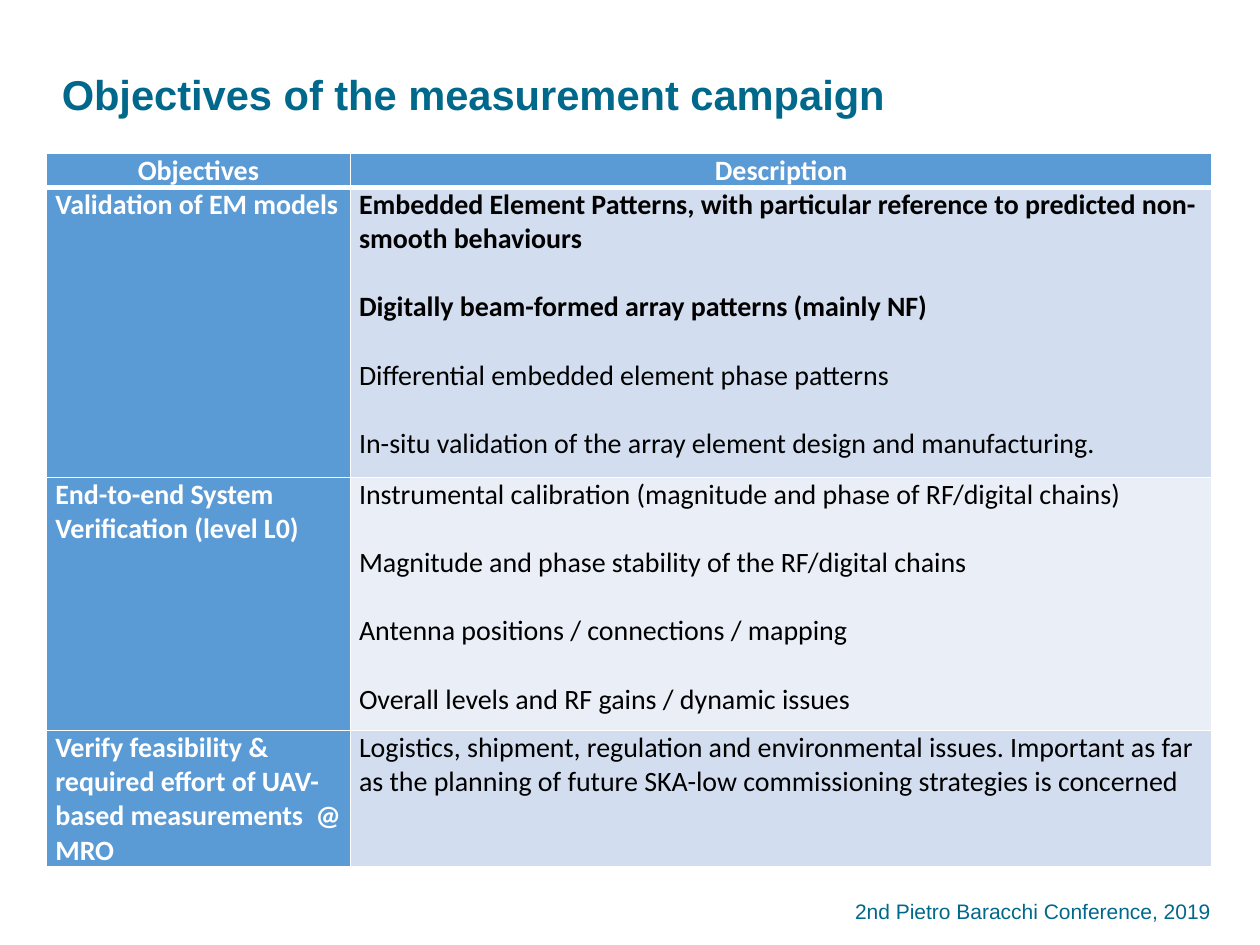
"""Build the slide listing the objectives of the measurement campaign."""
from dataclasses import dataclass

import lxml.etree
import pptx
import pptx.dml.color
import pptx.enum.text
import pptx.oxml
import pptx.oxml.ns
import pptx.util

Inches = pptx.util.Inches
Pt = pptx.util.Pt
RGBColor = pptx.dml.color.RGBColor
Align = pptx.enum.text.PP_ALIGN
Anchor = pptx.enum.text.MSO_ANCHOR

TEAL = RGBColor(0x00, 0x68, 0x8A)
BLUE = RGBColor(0x5B, 0x9B, 0xD5)
PALE_BLUE = RGBColor(0xD2, 0xDE, 0xEF)
PALER_BLUE = RGBColor(0xEA, 0xEF, 0xF7)
WHITE = RGBColor(0xFF, 0xFF, 0xFF)
BLACK = RGBColor(0x00, 0x00, 0x00)

COLUMN_WIDTHS = (2.41, 6.84)
HEADINGS = ("Objectives", "Description")
HEADING_HEIGHT = 0.27
ITEM_GAP = Pt(19.5)


@dataclass(frozen=True)
class Objective:
    name: str
    items: tuple[str, ...]
    height: float
    tint: RGBColor
    bold_items: int = 0


OBJECTIVES = (
    Objective(
        "Validation of EM models",
        (
            "Embedded Element Patterns, with particular reference to predicted non-smooth behaviours",
            "Digitally beam-formed array patterns (mainly NF)",
            "Differential embedded element phase patterns",
            "In-situ validation of the array element design and manufacturing.",
        ),
        2.3, PALE_BLUE, bold_items=2,
    ),
    Objective(
        "End-to-end System Verification (level L0)",
        (
            "Instrumental calibration (magnitude and phase of RF/digital chains)",
            "Magnitude and phase stability of the RF/digital chains",
            "Antenna positions / connections / mapping",
            "Overall levels and RF gains / dynamic issues",
        ),
        2.01, PALER_BLUE,
    ),
    Objective(
        "Verify feasibility & required effort of UAV-based measurements  @ MRO",
        (
            "Logistics, shipment, regulation and environmental issues. Important as far as "
            "the planning of future SKA-low commissioning strategies is concerned",
        ),
        1.08, PALE_BLUE,
    ),
)


def set_format(target, values: dict) -> None:
    for attribute, value in values.items():
        setattr(target, attribute, value)


def write_paragraph(paragraph, text: str, size: float, face: str, color: RGBColor,
                    bold: bool = False, align=Align.LEFT) -> None:
    paragraph.alignment = align
    run = paragraph.add_run()
    run.text = text
    set_format(run.font, {"size": Pt(size), "name": face, "bold": bold})
    run.font.color.rgb = color


def add_border(cell, side: str, points: float) -> None:
    line = lxml.etree.SubElement(cell._tc.get_or_add_tcPr(), pptx.oxml.ns.qn(f"a:ln{side}"),
                                 w=str(Pt(points)))
    fill = lxml.etree.SubElement(line, pptx.oxml.ns.qn("a:solidFill"))
    lxml.etree.SubElement(fill, pptx.oxml.ns.qn("a:srgbClr"), val=str(WHITE))


def fill_cell(cell, items: tuple[str, ...], fill: RGBColor, color: RGBColor, bold_items: int,
              align=Align.LEFT, top: float = 1, bottom: float = 1) -> None:
    set_format(cell, {"margin_left": Inches(0.07), "margin_right": Inches(0.07),
                      "margin_top": 0, "margin_bottom": 0, "vertical_anchor": Anchor.TOP})
    for side, points in {"L": 1, "R": 1, "T": top, "B": bottom}.items():
        add_border(cell, side, points)
    cell.fill.solid()
    cell.fill.fore_color.rgb = fill
    for index, item in enumerate(items):
        paragraph = cell.text_frame.add_paragraph() if index else cell.text_frame.paragraphs[0]
        if index:
            paragraph.space_before = ITEM_GAP
        write_paragraph(paragraph, item, 16, "Calibri", color, index < bold_items, align)


def add_objectives(slide) -> None:
    heights = (HEADING_HEIGHT, *(objective.height for objective in OBJECTIVES))
    table = slide.shapes.add_table(
        len(heights), len(COLUMN_WIDTHS), Inches(0.37), Inches(1.22),
        Inches(sum(COLUMN_WIDTHS)), Inches(sum(heights))).table
    for column, width in zip(table.columns, COLUMN_WIDTHS):
        column.width = Inches(width)
    for row, height in zip(table.rows, heights):
        row.height = Inches(height)
    for column, heading in enumerate(HEADINGS):
        fill_cell(table.cell(0, column), (heading,), BLUE, WHITE, 1, Align.CENTER, bottom=3)
    for row, objective in enumerate(OBJECTIVES, start=1):
        top = 3 if row == 1 else 1
        fill_cell(table.cell(row, 0), (objective.name,), BLUE, WHITE, 1, top=top)
        fill_cell(table.cell(row, 1), objective.items, objective.tint, BLACK,
                  objective.bold_items, top=top)


def add_title(slide) -> None:
    title = slide.shapes.title
    set_format(title, {"left": Inches(0.39), "top": Inches(0.57),
                       "width": Inches(6.86), "height": Inches(0.68)})
    set_format(title.text_frame, {"vertical_anchor": Anchor.TOP, "word_wrap": True,
                                  "auto_size": pptx.enum.text.MSO_AUTO_SIZE.NONE})
    heading = title.text_frame.paragraphs[0]
    heading.line_spacing = 0.8
    write_paragraph(heading, "Objectives of the measurement campaign", 23.8, "Arial", TEAL, True)


def add_conference(slide) -> None:
    conference = slide.shapes.add_textbox(Inches(6.54), Inches(7.03), Inches(3.17), Inches(0.4))
    set_format(conference.text_frame, {"vertical_anchor": Anchor.MIDDLE, "word_wrap": True})
    write_paragraph(conference.text_frame.paragraphs[0], "2nd Pietro Baracchi Conference, 2019",
                    12, "Arial", TEAL, align=Align.RIGHT)


def main() -> None:
    deck = pptx.Presentation()
    set_format(deck, {"slide_width": Inches(10), "slide_height": Inches(7.5)})
    slide = deck.slides.add_slide(deck.slide_layouts.get_by_name("Title Only"))
    add_title(slide)
    add_conference(slide)
    add_objectives(slide)
    deck.save("out.pptx")


if __name__ == "__main__":
    main()
